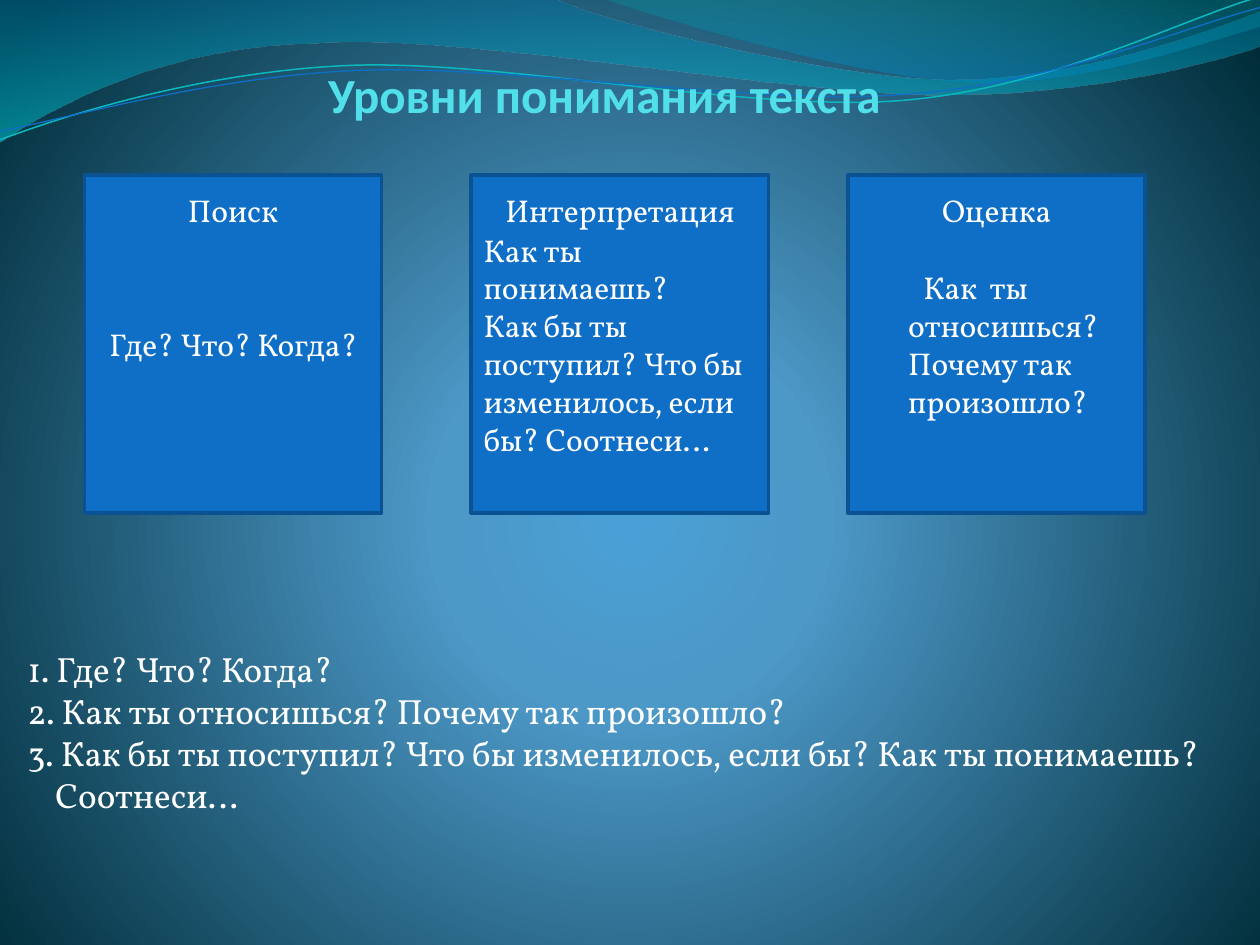
from lxml.etree import SubElement
from pptx import Presentation
from pptx.dml.color import RGBColor
from pptx.enum.shapes import MSO_SHAPE
from pptx.enum.text import MSO_ANCHOR, PP_ALIGN
from pptx.oxml.ns import qn
from pptx.util import Inches, Pt

WHITE = RGBColor(0xFF, 0xFF, 0xFF)
AQUA = RGBColor(0x51, 0xE0, 0xEA)
BLUE = RGBColor(0x0F, 0x6F, 0xC6)
NAVY = RGBColor(0x0B, 0x52, 0x92)
TEAL = RGBColor(0x0A, 0xB8, 0xBF)

# Content: a paragraph is (text, left margin, first-line indent)
TITLE = "Уровни понимания текста"
CARDS = [
    ("Поиск", 0.67, [("Где? Что? Когда?", 0.1, 0)]),
    ("Интерпретация", 3.74, [
        ("Как ты понимаешь?", 0, 0),
        ("Как бы ты поступил? Что бы изменилось, если бы? Соотнеси…", 0, 0)]),
    ("Оценка", 6.73, [
        ("Как  ты относишься? Почему так произошло?", 0.38, 0.12)]),
]
NOTES = [
    ("1. Где? Что? Когда?", 0.22, -0.22),
    ("2. Как ты относишься? Почему так произошло?", 0.22, -0.22),
    ("3. Как бы ты поступил? Что бы изменилось, если бы? Как ты понимаешь?",
     0.22, -0.22),
    ("Соотнеси…", 0.22, 0),
]

# Gradient stops: (position %, colour, opacity %)
GLOW = [(0, "4AA0D6", 100), (25, "4C98C7", 100), (100, "002C38", 100)]

# Waves: two numbers make a line, six make a curve
BANDS = [
    ([(0, 0), (4.4, -0.01), (4.76, 0.17, 6.64, 0.63, 7.58, 0.63),
      (8.53, 0.63, 9.58, 0.26, 10, 0.09), (10.01, 0.36),
      (9.83, 0.44, 8.7, 0.76, 7.46, 0.75), (6.22, 0.75, 3.82, 0.28, 2.57, 0.34),
      (1.29, 0.36, 0.46, 0.83, -0.01, 1.13)],
     [(0, "0074A1", 45), (100, "00C6CF", 55)]),
    ([(4.79, -0.01), (5.09, 0.11, 6.82, 0.62, 7.69, 0.65),
      (8.56, 0.69, 9.61, 0.32, 10, 0.21), (10, 0)],
     [(0, "00A1A9", 30), (80, "008BBF", 45)]),
]
LINES = [
    ([(0, 1.11), (0.48, 0.93, 1.58, 0.57, 2.77, 0.52),
      (3.95, 0.47, 5.93, 0.89, 7.13, 0.8),
      (8.33, 0.71, 9.38, 0.15, 9.98, -0.02)], TEAL, 0.85),
    ([(0, 1.04), (0.47, 0.96, 1.64, 0.61, 2.83, 0.56),
      (4.03, 0.51, 5.97, 0.84, 7.17, 0.75),
      (8.36, 0.67, 9.41, 0.21, 10, 0.06)], BLUE, 0.75),
]

deck = Presentation()
deck.slide_width, deck.slide_height = Inches(10), Inches(7.5)
slide = deck.slides.add_slide(deck.slide_layouts[6])
shapes = slide.shapes


def blend(fill, stops, focus=None):
    """Fill with a gradient: downward, or round when a focus is given."""
    fill.gradient()
    grad = fill._fill._gradFill
    for child in list(grad):
        grad.remove(child)
    row = SubElement(grad, qn("a:gsLst"))
    for pos, tone, alpha in stops:
        stop = SubElement(row, qn("a:gs"), pos=str(pos * 1000))
        color = SubElement(stop, qn("a:srgbClr"), val=tone)
        if alpha < 100:
            SubElement(color, qn("a:alpha"), val=str(alpha * 1000))
    if focus:
        way = SubElement(grad, qn("a:path"), path="circle")
        sides = {side: str(n * 1000) for side, n in zip("ltrb", focus)}
        SubElement(way, qn("a:fillToRect"), **sides)
    else:
        SubElement(grad, qn("a:lin"), ang="5400000", scaled="0")


def wave(parts, close):
    """Build an outline, then bend each run of three segments into a curve."""
    dots = [tuple(Inches(n) for n in part[k:k + 2])
            for part in parts for k in range(0, len(part), 2)]
    pen = shapes.build_freeform(*dots[0])
    pen.add_line_segments(dots[1:], close=close)
    shape = pen.convert_to_shape()
    shape.shadow.inherit = False
    legs = iter(list(shape._element.iter(qn("a:lnTo"))))
    for part in parts[1:]:
        leg = next(legs)
        if len(part) == 6:
            leg.tag = qn("a:cubicBezTo")
            for _ in range(2):
                extra = next(legs)
                leg.append(extra[0])
                extra.getparent().remove(extra)
    return shape


def write(shape, rows, size, align=PP_ALIGN.LEFT, font="Vollkorn",
          color=WHITE, bold=False, anchor=MSO_ANCHOR.TOP, wrap=True):
    frame = shape.text_frame
    frame.text = "\n".join(row[0] for row in rows)
    frame.word_wrap, frame.vertical_anchor = wrap, anchor
    for para, (_, left, first) in zip(frame.paragraphs, rows):
        para.alignment = align
        props = para._p.get_or_add_pPr()
        props.set("marL", str(Inches(left)))
        props.set("indent", str(Inches(first)))
        face = para.runs[0].font
        face.name, face.size, face.bold = font, Pt(size), bold
        face.color.rgb = color


def box(*area):
    return shapes.add_textbox(*map(Inches, area))


# Background and waves
blend(slide.background.fill, GLOW, focus=(10, 110, 10, 100))
for parts, stops in BANDS:
    band = wave(parts, True)
    blend(band.fill, stops)
    band.line.fill.background()
for parts, color, width in LINES:
    curve = wave(parts, False)
    curve.fill.background()
    curve.line.color.rgb, curve.line.width = color, Pt(width)

# Title
head = box(0.51, 0.52, 8.59, 0.46)
write(head, [(TITLE, 0, 0)], 28, PP_ALIGN.CENTER, "Calibri", AQUA, True,
      MSO_ANCHOR.BOTTOM)
frame = head.text_frame
frame.margin_left = frame.margin_top = frame.margin_bottom = 0
frame.margin_right = Inches(0.02)

# Cards
TOP, WIDE, HIGH = 1.39, 2.36, 2.68
for _, left, rows in CARDS:
    card = shapes.add_shape(MSO_SHAPE.RECTANGLE,
                            *map(Inches, (left, TOP, WIDE, HIGH)))
    card.shadow.inherit = False
    card.fill.solid()
    card.fill.fore_color.rgb = BLUE
    card.line.color.rgb, card.line.width = NAVY, Pt(2)
    write(card, rows, 18, anchor=MSO_ANCHOR.MIDDLE)

# Headings, centred on their cards
for (name, left, _), wide in zip(CARDS, (0.93, 2.02, 1.08)):
    write(box(left + (WIDE - wide) / 2, TOP + 0.08, wide, 0.4),
          [(name, 0, 0)], 18, PP_ALIGN.CENTER, wrap=False)

# Questions below
write(box(0.12, 5.09, 9.88, 1.45), NOTES, 20)

deck.save("out.pptx")
